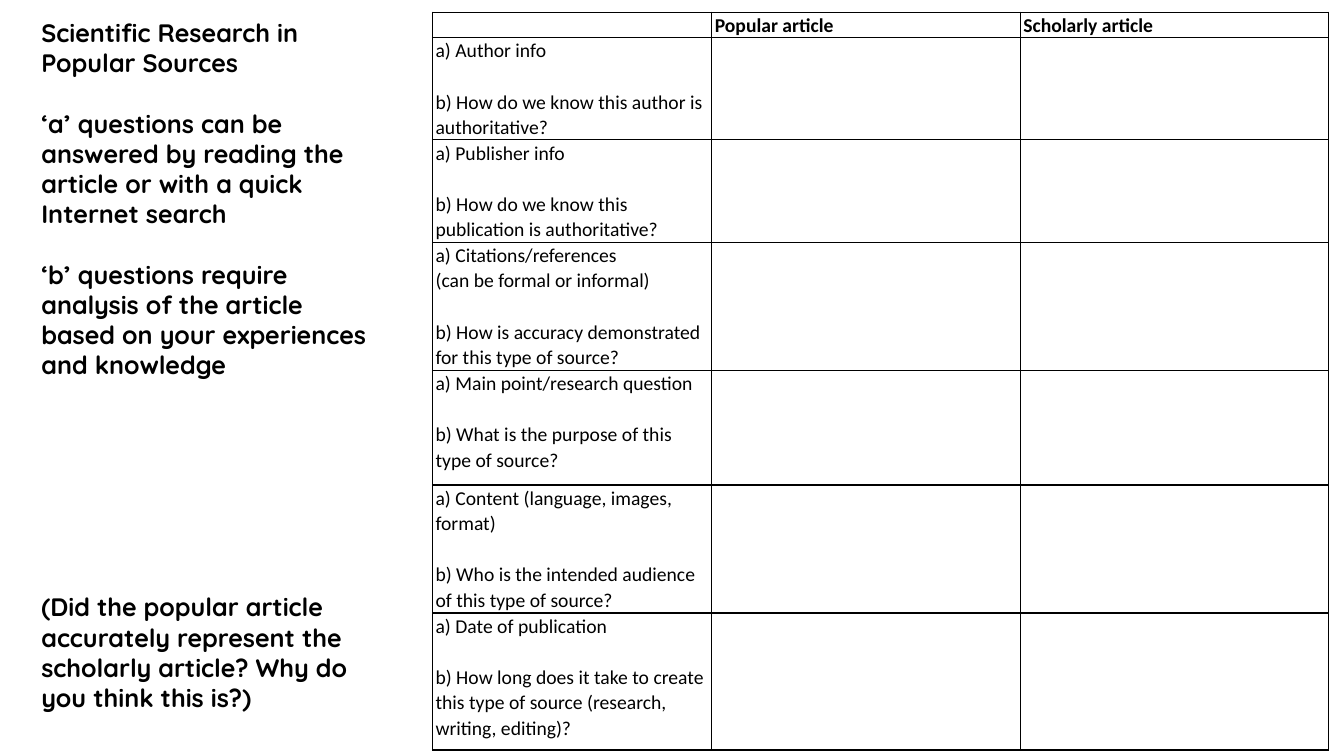
from dataclasses import dataclass

from lxml.etree import SubElement
from pptx import Presentation
from pptx.dml.color import RGBColor
from pptx.enum.text import MSO_ANCHOR, MSO_AUTO_SIZE, PP_ALIGN
from pptx.oxml.ns import qn
from pptx.util import Inches, Pt


@dataclass(frozen=True)
class Theme:
    ink: RGBColor = RGBColor(0, 0, 0)
    panel_font: str = "Quicksand"
    table_font: str = "Calibri"
    panel_size: int = 18
    table_size: int = 14
    panel_line: float = 21.6
    table_line: float = 18.3
    border: int = 1


THEME = Theme()

# Each paragraph: text, and the number of lines left free above it
PANEL = [
    ("Scientific Research in Popular Sources", 0),
    ("‘a’ questions can be answered by reading the article or with a quick Internet search", 1),
    ("‘b’ questions require analysis of the article based on your experiences and knowledge", 1),
    ("(Did the popular article accurately represent the scholarly article? Why do you think this is?)", 7),
]
HEADINGS = ["", "Popular article", "Scholarly article"]
COLUMN_WIDTHS = [2.77, 3.06, 3.06]
HEADING_HEIGHT = 0.25
# Each row: height, the "a" lines, the "b" question
QUESTIONS = [
    (1.01, ["a) Author info"], "b) How do we know this author is authoritative?"),
    (1.01, ["a) Publisher info"], "b) How do we know this publication is authoritative?"),
    (1.27, ["a) Citations/references", "(can be formal or informal)"],
     "b) How is accuracy demonstrated for this type of source?"),
    (1.14, ["a) Main point/research question"],
     "b) What is the purpose of this type of source?"),
    (1.27, ["a) Content (language, images, format)"],
     "b) Who is the intended audience of this type of source?"),
    (1.36, ["a) Date of publication"],
     "b) How long does it take to create this type of source (research, writing, editing)?"),
]


def format_runs(paragraph, font_name, size, bold):
    for run in paragraph.runs:
        run.font.name = font_name
        run.font.size = Pt(size)
        run.font.bold = bold
        run.font.color.rgb = THEME.ink


def fill_panel(panel):
    panel.left, panel.top = Inches(0.31), Inches(0.12)
    panel.width, panel.height = Inches(3.59), Inches(7.07)
    frame = panel.text_frame
    frame.word_wrap = True
    frame.auto_size = MSO_AUTO_SIZE.NONE
    frame.vertical_anchor = MSO_ANCHOR.TOP
    frame.text = "\n".join(text for text, _ in PANEL)
    for paragraph, (_, free_lines) in zip(frame.paragraphs, PANEL):
        paragraph.alignment = PP_ALIGN.LEFT
        paragraph.space_before = Pt(free_lines * THEME.panel_line)
        format_runs(paragraph, THEME.panel_font, THEME.panel_size, True)


def add_borders(cell):
    properties = cell._tc.get_or_add_tcPr()
    for side in ("a:lnL", "a:lnR", "a:lnT", "a:lnB"):
        line = SubElement(properties, qn(side), w=str(Pt(THEME.border)))
        fill = SubElement(line, qn("a:solidFill"))
        SubElement(fill, qn("a:srgbClr"), val=str(THEME.ink))


def fill_cell(cell, lines, bold=False):
    cell.margin_left = cell.margin_right = Inches(0.03)
    cell.margin_top = cell.margin_bottom = 0
    add_borders(cell)
    cell.fill.background()
    cell.text_frame.text = "\n".join(lines)
    for paragraph in cell.text_frame.paragraphs:
        paragraph.line_spacing = 1.07
        format_runs(paragraph, THEME.table_font, THEME.table_size, bold)
        if not paragraph.runs:
            # An empty cell takes its minimum height from this size
            SubElement(paragraph._p, qn("a:endParaRPr"), sz=str(THEME.table_size * 100))


def add_question_table(slide):
    heights = [HEADING_HEIGHT] + [height for height, _, _ in QUESTIONS]
    frame = slide.shapes.add_table(
        len(heights), len(COLUMN_WIDTHS), Inches(4.29), Inches(0.12),
        Inches(sum(COLUMN_WIDTHS)), Inches(sum(heights)))
    table = frame.table
    table.first_row = table.horz_banding = False
    for column, width in zip(table.columns, COLUMN_WIDTHS):
        column.width = Inches(width)
    for row, height in zip(table.rows, heights):
        row.height = Inches(height)

    for index, heading in enumerate(HEADINGS):
        fill_cell(table.cell(0, index), [heading], bold=True)
    for index, (_, a_lines, b_question) in enumerate(QUESTIONS, start=1):
        question_cell = table.cell(index, 0)
        fill_cell(question_cell, a_lines + [b_question])
        question_cell.text_frame.paragraphs[-1].space_before = Pt(THEME.table_line)
        for answer_column in range(1, len(HEADINGS)):
            fill_cell(table.cell(index, answer_column), [""])


def main():
    presentation = Presentation()
    presentation.slide_width = Inches(13.33)
    presentation.slide_height = Inches(7.5)
    title_only = presentation.slide_layouts[5]
    slide = presentation.slides.add_slide(title_only)
    fill_panel(slide.shapes.title)
    add_question_table(slide)
    presentation.save("out.pptx")


if __name__ == "__main__":
    main()
